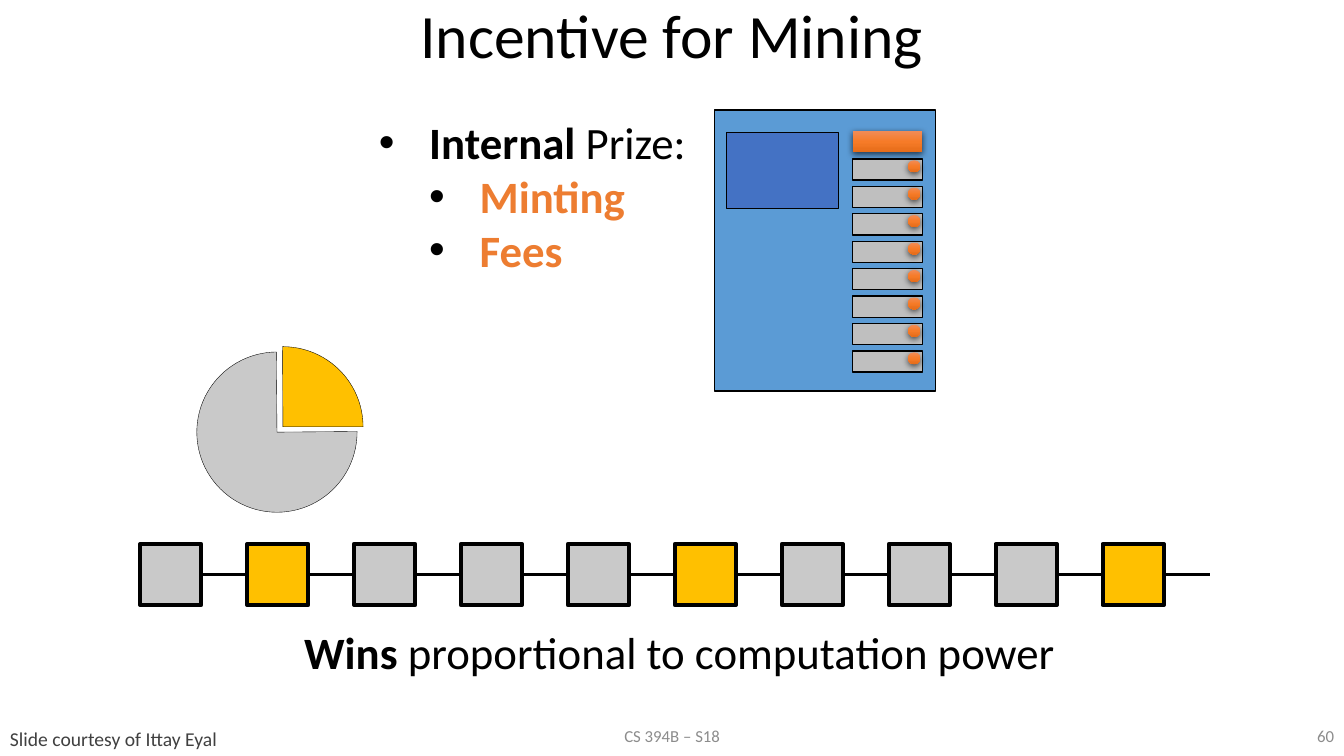
from copy import deepcopy
from lxml import etree
from pptx import Presentation
from pptx.dml.color import RGBColor
from pptx.enum import shapes, text
from pptx.oxml import ns
from pptx.util import Pt

INK = {
    "black": "000000", "orange": "ED7D31", "blue": "5B9BD5", "screen": "4472C4",
    "slot": "BFBFBF", "gray": "C9C9C9", "gold": "FFC000", "note": "404040",
    "foot": "8C8C8C", "glow1": "F18C57", "glow2": "F67B28", "glow3": "E56C19",
}
FORM = shapes.MSO_SHAPE
SIDE = text.PP_ALIGN
MID = text.MSO_ANCHOR.MIDDLE


def draw(home, form, box, fill, line=None):
    item = home.shapes.add_shape(form, *map(Pt, box))
    item.shadow.inherit = False
    if line:
        item.line.color.rgb = RGBColor.from_string(INK["black"])
        item.line.width = Pt(line)
    else:
        item.line.fill.background()
    if fill != "glow":
        item.fill.solid()
        item.fill.fore_color.rgb = RGBColor.from_string(INK[fill])
        return item
    item.fill.gradient()
    item.fill.gradient_angle = 270
    props = item._element.spPr
    stops = props.find(".//" + ns.qn("a:gsLst"))
    stops.insert(1, deepcopy(stops[0]))
    for n, stop in enumerate(item.fill.gradient_stops):
        stop.position = n / 2
        stop.color.rgb = RGBColor.from_string(INK[f"glow{n + 1}"])
    shade = etree.SubElement(props.find(ns.qn("a:effectLst")), ns.qn("a:outerShdw"),
                             blurRad="57150", dist="19050", dir="5400000",
                             algn="ctr", rotWithShape="0")
    tint = etree.SubElement(shade, ns.qn("a:srgbClr"), val=INK["black"])
    etree.SubElement(tint, ns.qn("a:alpha"), val="63000")
    return item


def write(para, words, size, color="black", bold=False):
    run = para.add_run()
    run.text = words
    run.font.name = "Calibri"
    run.font.size = Pt(size)
    run.font.bold = bold
    run.font.color.rgb = RGBColor.from_string(INK[color])


deck = Presentation()
deck.slide_width, deck.slide_height = Pt(960), Pt(540)
slide = deck.slides.add_slide(deck.slide_layouts[5])

title = slide.shapes.title
title.left, title.top, title.width, title.height = map(Pt, (0, 0, 960, 55.4))
title.text_frame.vertical_anchor = MID
para = title.text_frame.paragraphs[0]
para.alignment = SIDE.CENTER
para.line_spacing = 0.9
write(para, "Incentive for Mining", 44)

prize = slide.shapes.add_textbox(*map(Pt, (263.5, 78.5, 241.2, 123.8))).text_frame
prize.word_wrap = True
points = [
    (0, [("Internal ", "black", True), ("Prize:", "black", False)]),
    (1, [("Minting", "orange", True)]),
    (1, [("Fees", "orange", True)]),
]
for n, (level, parts) in enumerate(points):
    para = prize.add_paragraph() if n else prize.paragraphs[0]
    para.level = level
    props = para._p.get_or_add_pPr()
    props.set("marL", str(Pt(36 * (level + 1))))
    props.set("indent", str(-Pt(36)))
    tint = etree.SubElement(props, ns.qn("a:buClr"))
    etree.SubElement(tint, ns.qn("a:srgbClr"), val=INK["black"])
    etree.SubElement(props, ns.qn("a:buFont"), typeface="Arial")
    etree.SubElement(props, ns.qn("a:buChar"), char="•")
    for words, color, bold in parts:
        write(para, words, 32, color, bold)

vendor = slide.shapes.add_group_shape()
draw(vendor, FORM.RECTANGLE, (510.5, 78.5, 157.7, 200.9), "blue", 1)
draw(vendor, FORM.RECTANGLE, (609.1, 93.6, 49.7, 15.1), "glow")
draw(vendor, FORM.RECTANGLE, (519.1, 94.5, 80, 54.6), "screen", 1)
for n in range(8):
    drop = 19.6 * n
    draw(vendor, FORM.RECTANGLE, (609.1, 113.5 + drop, 49.7, 15.1), "slot", 1)
    draw(vendor, FORM.OVAL, (648.7, 114.5 + drop, 8.6, 8.6), "glow")

pie = slide.shapes.add_group_shape()
slices = [
    (140.6, 251.4, "gray", 270, 53.73, 215.76),
    (144.8, 247.6, "gold", 90, 107.84, 162),
]
for left, top, color, turn, start, end in slices:
    part = draw(pie, FORM.PIE, (left, top, 114.5, 114.5), color, 0.25)
    part.rotation = turn
    part.adjustments[0], part.adjustments[1] = start, end

SIZE, STEP, TOP = 43.6, 76.4, 388.6
for n in range(10):
    left = 100.1 + STEP * n
    color = "gold" if n in (1, 5, 9) else "gray"
    draw(slide, FORM.RECTANGLE, (left, TOP, SIZE, SIZE), color, 3)
    ends = (left + SIZE, TOP + SIZE / 2, left + STEP, TOP + SIZE / 2)
    link = slide.shapes.add_connector(shapes.MSO_CONNECTOR.STRAIGHT, *map(Pt, ends))
    link.line.color.rgb = RGBColor.from_string(INK["black"])
    link.line.width = Pt(2.25)
    etree.SubElement(link._element.spPr, ns.qn("a:effectLst"))

TOPS = text.MSO_ANCHOR.TOP
labels = [
    ((210.2, 442.8, 561.6, 46.1), TOPS, SIDE.LEFT, True, 32, "black",
     [("Wins", True), (" proportional to computation power", False)]),
    ((0, 515.5, 164.2, 24.5), TOPS, SIDE.LEFT, False, 14, "note",
     [("Slide courtesy of Ittay Eyal", False)]),
    ((318.2, 511.2, 324, 28.8), MID, SIDE.CENTER, True, 12, "foot",
     [("CS 394B – S18", False)]),
    ((874.1, 511.2, 85.9, 28.8), MID, SIDE.RIGHT, True, 12, "foot",
     [("60", False)]),
]
for box, anchor, side, wrap, size, color, parts in labels:
    frame = slide.shapes.add_textbox(*map(Pt, box)).text_frame
    frame.word_wrap = wrap
    frame.vertical_anchor = anchor
    frame.paragraphs[0].alignment = side
    for words, bold in parts:
        write(frame.paragraphs[0], words, size, color, bold)

deck.save("out.pptx")
